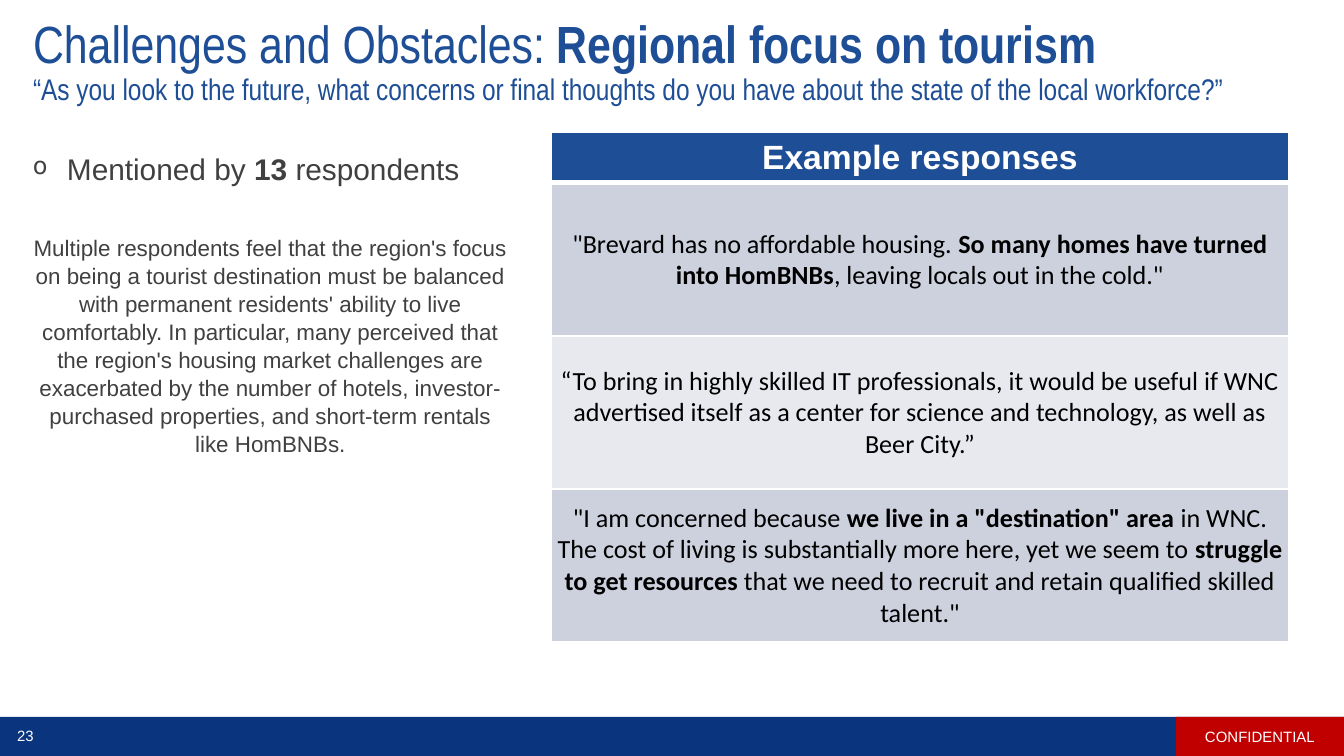
from dataclasses import dataclass

from lxml.etree import SubElement
from pptx import Presentation
from pptx.dml.color import RGBColor
from pptx.enum.shapes import MSO_SHAPE
from pptx.enum.text import MSO_ANCHOR, MSO_AUTO_SIZE, PP_ALIGN
from pptx.oxml import parse_xml
from pptx.oxml.ns import nsdecls, qn
from pptx.util import Pt

SCALE = 914400 / 134.4


def px(size):
    """Turn px into EMU."""
    return round(size * SCALE)


@dataclass(frozen=True)
class Theme:
    """Colours, fonts and type sizes of the deck."""
    blue: str = "1E4E96"
    navy: str = "0A357E"
    red: str = "C00000"
    white: str = "FFFFFF"
    black: str = "000000"
    grey: str = "404040"
    bands: tuple = ("CDD0DD", "E8E9EF")
    sans: str = "Arial"
    narrow: str = "Arial Narrow"
    quote: str = "Calibri"
    title: int = 28
    head: int = 18
    lead: int = 16
    cell: int = 14
    body: int = 12
    foot: int = 8


class Deck:
    """Holds the theme and the current slide."""

    def __init__(self, theme, width, height):
        """Start a deck with one title-only slide."""
        self.theme = theme
        self.show = Presentation()
        self.show.slide_width, self.show.slide_height = px(width), px(height)
        self.slide = self.show.slides.add_slide(self.show.slide_layouts[5])

    def add_runs(self, par, runs, size, color, face, align=PP_ALIGN.CENTER):
        """Add (text, bold) runs to a paragraph."""
        par.alignment = align
        for text, bold in runs:
            run = par.add_run()
            run.text = text
            font = run.font
            font.size, font.bold, font.name = Pt(size), bold, face
            font.color.rgb = RGBColor.from_string(color)

    def frame(self, item, pads, anchor):
        """Set wrap, anchor and insets (left, top, right, bottom)."""
        area = item.text_frame
        area.word_wrap, area.auto_size = True, MSO_AUTO_SIZE.NONE
        area.vertical_anchor = anchor
        area.margin_left, area.margin_top, area.margin_right, area.margin_bottom = map(px, pads)
        return area

    def title(self, box, runs, note):
        """Fill the title with a headline and a smaller line below."""
        look, item = self.theme, self.slide.shapes.title
        item.left, item.top, item.width, item.height = map(px, box)
        par = self.frame(item, (13, 13, 27, 13), MSO_ANCHOR.MIDDLE).paragraphs[0]
        par.line_spacing = 0.9
        style = look.blue, look.narrow, PP_ALIGN.LEFT
        self.add_runs(par, runs, look.title, *style)
        par.add_line_break()
        SubElement(par._p.find(qn("a:br")), qn("a:rPr"), sz=str(look.title * 100))
        self.add_runs(par, [(note, False)], look.lead, *style)

    def bar(self, box, color, text=None):
        """Draw a footer bar, with a label if given."""
        look = self.theme
        item = self.slide.shapes.add_shape(MSO_SHAPE.RECTANGLE, *map(px, box))
        item.shadow.inherit = False
        item.fill.solid()
        item.fill.fore_color.rgb = RGBColor.from_string(color)
        item.line.fill.background()
        if text:
            par = self.frame(item, (13, 7, 13, 7), MSO_ANCHOR.MIDDLE).paragraphs[0]
            self.add_runs(par, [(text, False)], look.foot, look.white, look.sans)

    def label(self, box, text):
        """Add small footer text."""
        look = self.theme
        item = self.slide.shapes.add_textbox(*map(px, box))
        par = self.frame(item, (0, 0, 0, 0), MSO_ANCHOR.MIDDLE).paragraphs[0]
        self.add_runs(par, [(text, False)], look.foot, look.white, look.sans)

    def notes(self, box, lead, body):
        """Add a bullet line and a centred paragraph."""
        look = self.theme
        item = self.slide.shapes.add_textbox(*map(px, box))
        area = self.frame(item, (13, 7, 13, 7), MSO_ANCHOR.TOP)
        par = area.paragraphs[0]
        props = par._p.get_or_add_pPr()
        props.set("marL", str(px(34)))
        props.set("indent", str(-px(34)))
        SubElement(props, qn("a:buSzPct"), val="80000")
        SubElement(props, qn("a:buChar"), char="o")
        self.add_runs(par, lead, look.lead, look.grey, look.sans, PP_ALIGN.LEFT)
        par = area.add_paragraph()
        par.space_before, par.line_spacing = Pt(25), 1.04
        self.add_runs(par, [(body, False)], look.body, look.grey, look.sans)

    def cell(self, cell, runs, fill, size, color, face, top=1, base=1):
        """Fill one table cell and draw its white borders."""
        props = cell._tc.get_or_add_tcPr()
        for side, width in zip("LRTB", (1, 1, top, base)):
            props.append(parse_xml(
                f'<a:ln{side} {nsdecls("a")} w="{Pt(width)}"><a:solidFill>'
                f'<a:srgbClr val="{self.theme.white}"/></a:solidFill></a:ln{side}>'))
        cell.fill.solid()
        cell.fill.fore_color.rgb = RGBColor.from_string(fill)
        cell.vertical_anchor = MSO_ANCHOR.MIDDLE
        cell.margin_left = cell.margin_top = cell.margin_right = px(1)
        cell.margin_bottom = 0
        self.add_runs(cell.text_frame.paragraphs[0], runs, size, color, face)

    def table(self, left, top, width, heights, head, quotes):
        """Add a one-column table of banded quotes under a header."""
        look = self.theme
        first, rest = heights
        full = first + rest * len(quotes)
        grid = self.slide.shapes.add_table(
            len(quotes) + 1, 1, *map(px, (left, top, width, full))).table
        grid.rows[0].height = px(first)
        self.cell(grid.cell(0, 0), [(head, True)], look.blue,
                  look.head, look.white, look.sans, base=3)
        for row, runs in enumerate(quotes, 1):
            grid.rows[row].height = px(rest)
            self.cell(grid.cell(row, 0), runs, look.bands[(row - 1) % 2],
                      look.cell, look.black, look.quote, top=3 if row == 1 else 1)


def main():
    """Build and save the slide."""
    look = Theme()
    deck = Deck(look, 1344, 756)
    deck.bar((0, 717, 1344, 39), look.navy)
    deck.bar((1176, 717, 168, 39), look.red, "CONFIDENTIAL")
    deck.title((20, 20, 1300, 85),
               [("Challenges and Obstacles: ", False), ("Regional focus on tourism", True)],
               "“As you look to the future, what concerns or final thoughts do you have "
               "about the state of the local workforce?”")
    deck.label((0, 720, 51, 32), "23")
    deck.table(551, 132, 738, (51, 153), "Example responses", [
        [("\"Brevard has no affordable housing. ", False),
         ("So many homes have turned into HomBNBs", True),
         (", leaving locals out in the cold.\"", False)],
        [("“To bring in highly skilled IT professionals, it would be useful if WNC advertised "
          "itself as a center for science and technology, as well as Beer City.”", False)],
        [("\"I am concerned because ", False),
         ("we live in a \"destination\" area ", True),
         ("in WNC. The cost of living is substantially more here, yet we seem to ", False),
         ("struggle to get resources ", True),
         ("that we need to recruit and retain qualified skilled talent.\"", False)],
    ])
    deck.notes((20, 144, 501, 363),
               [("Mentioned by ", False), ("13", True), (" respondents", False)],
               "Multiple respondents feel that the region's focus on being a tourist destination "
               "must be balanced with permanent residents' ability to live comfortably. In "
               "particular, many perceived that the region's housing market challenges are "
               "exacerbated by the number of hotels, investor-purchased properties, and "
               "short-term rentals like HomBNBs.")
    deck.show.save("out.pptx")


if __name__ == "__main__":
    main()
